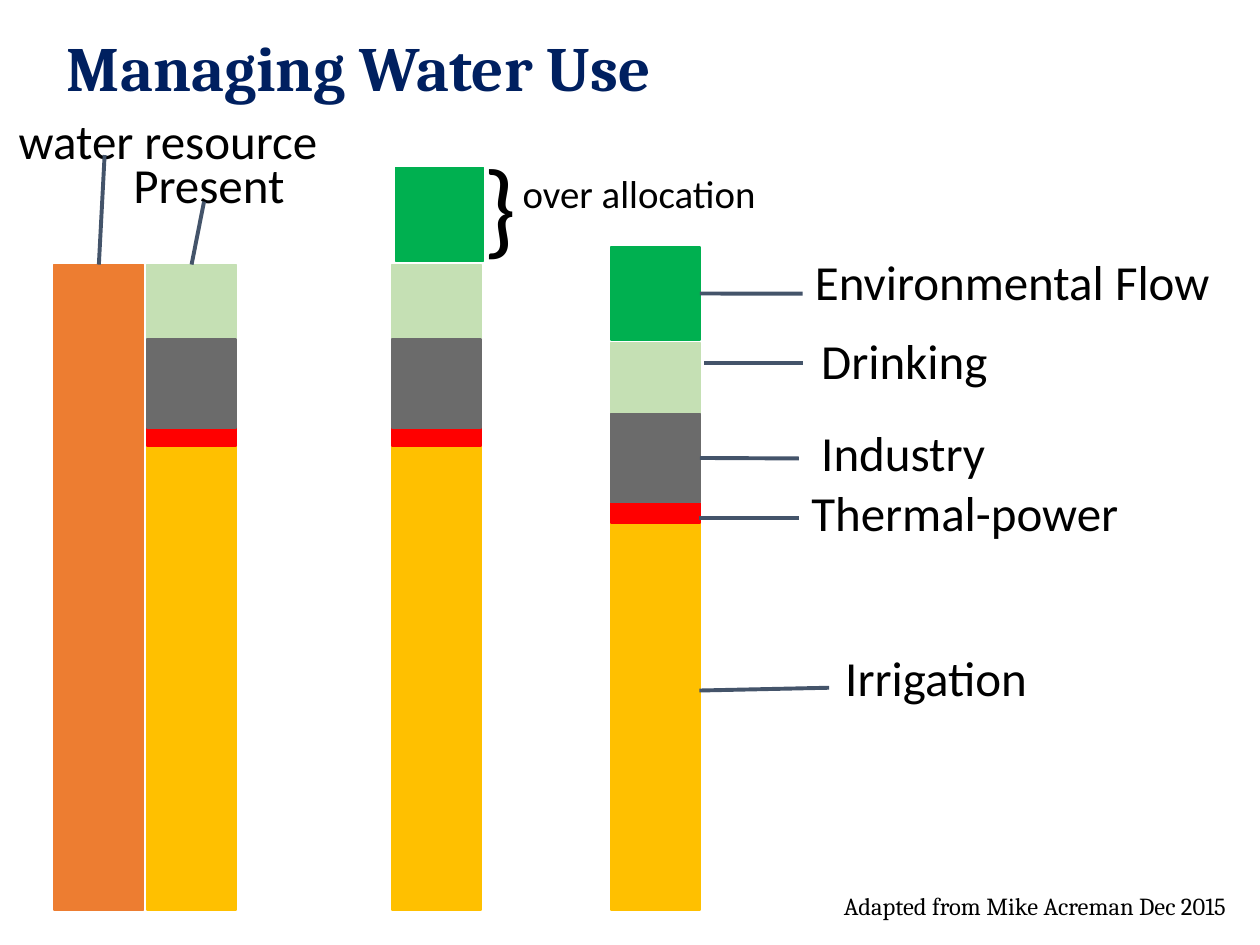
from lxml.etree import SubElement
from pptx import Presentation
from pptx.dml.color import RGBColor
from pptx.enum.shapes import MSO_CONNECTOR, MSO_SHAPE
from pptx.enum.text import MSO_ANCHOR, PP_ALIGN
from pptx.oxml.ns import qn
from pptx.util import Pt

NAVY = RGBColor(0x00, 0x20, 0x60)
BLACK = RGBColor(0x00, 0x00, 0x00)
SLATE = RGBColor(0x44, 0x54, 0x6A)
ORANGE = RGBColor(0xED, 0x7D, 0x31)
COLOURS = {
    "Irrigation": RGBColor(0xFF, 0xC0, 0x00),
    "Thermal-power": RGBColor(0xFF, 0x00, 0x00),
    "Drinking": RGBColor(0xC5, 0xE0, 0xB4),
    "Industry": RGBColor(0x6B, 0x6B, 0x6B),
    "Environmental Flow": RGBColor(0x00, 0xB0, 0x50),
}
BAR_WIDTH = 51
BASELINE = 520
RIGHT, TOP = 3, 0

# Top and height of each use, from the back to the front
PRESENT_USE = {
    "Irrigation": (255, BASELINE - 255),
    "Thermal-power": (243.4, 11.5),
    "Drinking": (151.2, 42),
    "Industry": (193.7, 51),
}
MANAGED_USE = {
    "Irrigation": (295.2, BASELINE - 295.2),
    "Thermal-power": (287.3, 11.5),
    "Drinking": (195.8, 46.8),
    "Industry": (236.2, 51),
    "Environmental Flow": (141.1, 53.3),
}

# Label left and top, then leader start and end; None joins the segment's side
USE_LABELS = {
    "Environmental Flow": ((458.6, 144), (458.6, 167.8), None),
    "Drinking": ((462.2, 189.4), (458.6, 207.4), (402.5, 207.4)),
    "Industry": ((462.2, 241.9), (456.5, 262), None),
    "Thermal-power": ((456.5, 275.8), (456.5, 296), (399.6, 296)),
    "Irrigation": ((475.9, 370), (473.8, 393), (399.6, 394.6)),
}


def format_text(frame, text, align=PP_ALIGN.LEFT, spacing=0.9, **font_format):
    frame.text = text
    frame.word_wrap = True
    paragraph = frame.paragraphs[0]
    paragraph.alignment = align
    paragraph.line_spacing = spacing
    font = paragraph.runs[0].font
    values = {"name": "Calibri", "size": Pt(28), "bold": False} | font_format
    font.color.rgb = values.pop("colour", BLACK)
    for name, value in values.items():
        setattr(font, name, value)


def add_label(slide, text, left, top, width=262, height=52, **text_format):
    label = slide.shapes.add_textbox(Pt(left), Pt(top), Pt(width), Pt(height))
    format_text(label.text_frame, text, **text_format)


def add_segment(slide, colour, left, top, height, width=BAR_WIDTH):
    segment = slide.shapes.add_shape(
        MSO_SHAPE.RECTANGLE, Pt(left), Pt(top), Pt(width), Pt(height))
    segment.shadow.inherit = False
    segment.fill.solid()
    segment.fill.fore_color.rgb = colour
    segment.line.color.rgb = colour
    segment.line.width = Pt(1)
    return segment


def add_bar(slide, left, uses):
    return {use: add_segment(slide, COLOURS[use], left, *extent)
            for use, extent in uses.items()}


def add_leader(slide, start, end=None, segment=None, side=RIGHT):
    leader = slide.shapes.add_connector(
        MSO_CONNECTOR.STRAIGHT, *map(Pt, start), *map(Pt, end or start))
    if segment is not None:
        leader.end_connect(segment, side)
    leader.line.color.rgb = SLATE
    leader.line.width = Pt(2.25)
    SubElement(leader._element.spPr, qn("a:effectLst"))


def add_title(slide, text):
    title = slide.shapes.title
    place = {"left": 31, "top": 9.4, "width": 648, "height": 62.6}
    for name, value in place.items():
        setattr(title, name, Pt(value))
    title.text_frame.vertical_anchor = MSO_ANCHOR.MIDDLE
    format_text(title.text_frame, text, name="Cambria", size=Pt(36),
                bold=True, colour=NAVY)


def main():
    presentation = Presentation()
    presentation.slide_width = Pt(720)
    presentation.slide_height = Pt(540)
    slide = presentation.slides.add_slide(presentation.slide_layouts[5])
    add_title(slide, "Managing Water Use")

    # Bars: the resource, present use, over-allocated use and managed use
    resource = add_segment(slide, ORANGE, 31, 151.2, BASELINE - 151.2)
    present = add_bar(slide, 84, PRESENT_USE)
    add_bar(slide, 224, PRESENT_USE)
    add_segment(slide, COLOURS["Environmental Flow"], 226, 95.8, 53.3, 50.4)
    managed = add_bar(slide, 349, MANAGED_USE)

    # Labels of the two left bars
    add_label(slide, "water resource", 3.6, 63.4)
    add_leader(slide, (59.8, 88.6), segment=resource, side=TOP)
    add_label(slide, "Present", 69.1, 91.4, 116, 35, spacing=0.8)
    add_leader(slide, (116.6, 115.2), segment=present["Drinking"], side=TOP)

    # Over allocation with its brace
    add_label(slide, "}", 269.3, 77, 57, 80, spacing=1.0, size=Pt(60))
    add_label(slide, "over allocation", 291.6, 98.6, 170, 30,
              spacing=0.8, size=Pt(22.2))

    # Labels of the uses
    for use, (place, start, end) in USE_LABELS.items():
        add_label(slide, use, *place)
        add_leader(slide, start, end, None if end else managed[use])

    # Credit
    add_label(slide, "Adapted from Mike Acreman Dec 2015", 432, 507.6, 275.8,
              32.4, align=PP_ALIGN.RIGHT, name="Cambria", size=Pt(14))
    presentation.save("out.pptx")


if __name__ == "__main__":
    main()
